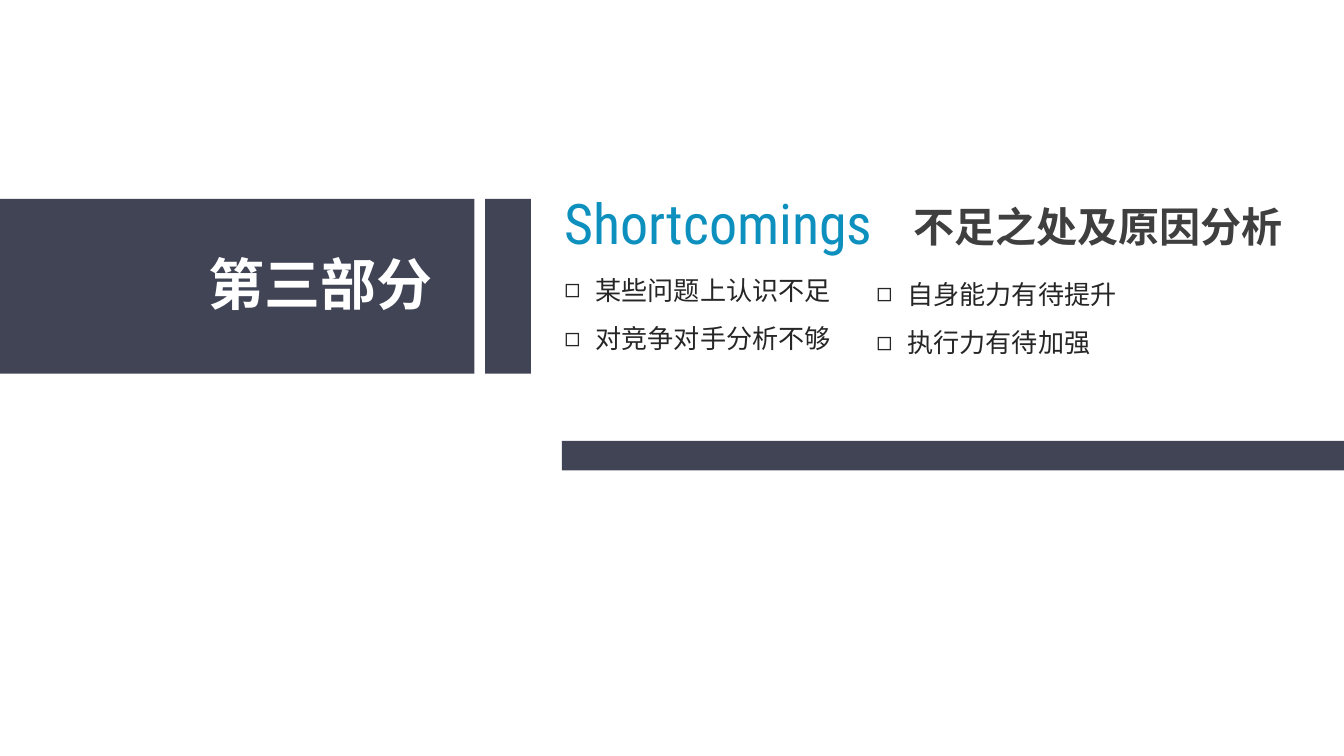
from dataclasses import dataclass

from lxml import etree
from pptx import Presentation
from pptx.dml.color import RGBColor
from pptx.enum.shapes import MSO_SHAPE
from pptx.enum.text import MSO_ANCHOR, MSO_AUTO_SIZE, PP_ALIGN
from pptx.oxml.ns import qn
from pptx.shapes.base import BaseShape
from pptx.slide import Slide
from pptx.text.text import TextFrame, _Paragraph
from pptx.util import Inches, Pt

RECTANGLE = MSO_SHAPE.RECTANGLE
TOP = MSO_ANCHOR.TOP
LEFT = PP_ALIGN.LEFT
FIT_TEXT = MSO_AUTO_SIZE.SHAPE_TO_FIT_TEXT

SLIDE_WIDTH = 10
SLIDE_HEIGHT = SLIDE_WIDTH * 9 / 16

SLATE = RGBColor(0x41, 0x44, 0x55)
WHITE = RGBColor(0xFF, 0xFF, 0xFF)
BLUE = RGBColor(0x0E, 0x90, 0xBE)
DARK_GRAY = RGBColor(0x3F, 0x3F, 0x3F)
BLACK_GRAY = RGBColor(0x26, 0x26, 0x26)

CJK_FONT = "Noto Sans CJK SC"
LATIN_FONT = "Roboto Condensed"
BULLET = "◻"
BULLET_INDENT = Inches(0.23)
ITEM_GAP = Pt(9)


@dataclass(frozen=True)
class Box:
    left: float
    top: float
    width: float
    height: float


@dataclass(frozen=True)
class TextStyle:
    size: float
    color: RGBColor
    font: str = CJK_FONT
    bold: bool = False


@dataclass(frozen=True)
class BulletColumn:
    box: Box
    items: tuple[str, ...]


BARS = (
    Box(0, 1.48, 3.53, 1.3),
    Box(3.61, 1.48, 0.34, 1.3),
    Box(4.18, 3.28, 5.82, 0.22),
)
COLUMNS = (
    BulletColumn(Box(4.13, 2, 2.15, 0.67), ("某些问题上认识不足", "对竞争对手分析不够")),
    BulletColumn(Box(6.45, 2.03, 1.96, 0.67), ("自身能力有待提升", "执行力有待加强")),
)
PART_STYLE = TextStyle(30, WHITE, bold=True)
ENGLISH_STYLE = TextStyle(30, BLUE, LATIN_FONT)
TITLE_STYLE = TextStyle(22, DARK_GRAY, bold=True)
ITEM_STYLE = TextStyle(14, BLACK_GRAY)


def place(shape: BaseShape, box: Box) -> None:
    shape.left, shape.top = Inches(box.left), Inches(box.top)
    shape.width, shape.height = Inches(box.width), Inches(box.height)


def prepare_frame(frame: TextFrame) -> None:
    frame.margin_left = frame.margin_right = Inches(0.07)
    frame.margin_top = frame.margin_bottom = Inches(0.04)
    frame.vertical_anchor = TOP
    frame.word_wrap = False
    frame.auto_size = FIT_TEXT


def add_styled_run(paragraph: _Paragraph, text: str, style: TextStyle) -> None:
    paragraph.alignment = LEFT
    run = paragraph.add_run()
    run.text = text
    run.font.name = style.font
    run.font.size = Pt(style.size)
    run.font.bold = style.bold
    run.font.color.rgb = style.color
    east_asian = etree.SubElement(run.font._element, qn("a:ea"))
    east_asian.set("typeface", style.font)


def add_bar(slide: Slide, box: Box) -> None:
    bar = slide.shapes.add_shape(
        RECTANGLE, Inches(box.left), Inches(box.top), Inches(box.width), Inches(box.height)
    )
    bar.shadow.inherit = False
    bar.fill.solid()
    bar.fill.fore_color.rgb = SLATE
    bar.line.fill.background()


def write_line(shape: BaseShape, box: Box, text: str, style: TextStyle) -> None:
    place(shape, box)
    prepare_frame(shape.text_frame)
    add_styled_run(shape.text_frame.paragraphs[0], text, style)


def add_label(slide: Slide, box: Box, text: str, style: TextStyle) -> None:
    write_line(slide.shapes.add_textbox(0, 0, 0, 0), box, text, style)


def set_bullet(paragraph: _Paragraph) -> None:
    properties = paragraph._p.get_or_add_pPr()
    properties.set("marL", str(BULLET_INDENT))
    properties.set("indent", str(-BULLET_INDENT))
    etree.SubElement(properties, qn("a:buChar")).set("char", BULLET)


def fill_column(body: BaseShape, column: BulletColumn) -> None:
    place(body, column.box)
    frame = body.text_frame
    prepare_frame(frame)
    for index, item in enumerate(column.items):
        paragraph = frame.add_paragraph() if index else frame.paragraphs[0]
        paragraph.space_before = ITEM_GAP if index else Pt(0)
        set_bullet(paragraph)
        add_styled_run(paragraph, item, ITEM_STYLE)


def main() -> None:
    presentation = Presentation()
    presentation.slide_width = Inches(SLIDE_WIDTH)
    presentation.slide_height = Inches(SLIDE_HEIGHT)
    two_content_layout = presentation.slide_layouts[3]
    slide = presentation.slides.add_slide(two_content_layout)
    title, *bodies = slide.placeholders

    for bar in BARS:
        add_bar(slide, bar)
    add_label(slide, Box(1.48, 1.82, 1.84, 0.58), "第三部分", PART_STYLE)
    add_label(slide, Box(4.13, 1.36, 2.59, 0.58), "Shortcomings", ENGLISH_STYLE)
    write_line(title, Box(6.73, 1.46, 2.93, 0.45), "不足之处及原因分析", TITLE_STYLE)
    for body, column in zip(bodies, COLUMNS):
        fill_column(body, column)

    presentation.save("out.pptx")


if __name__ == "__main__":
    main()
